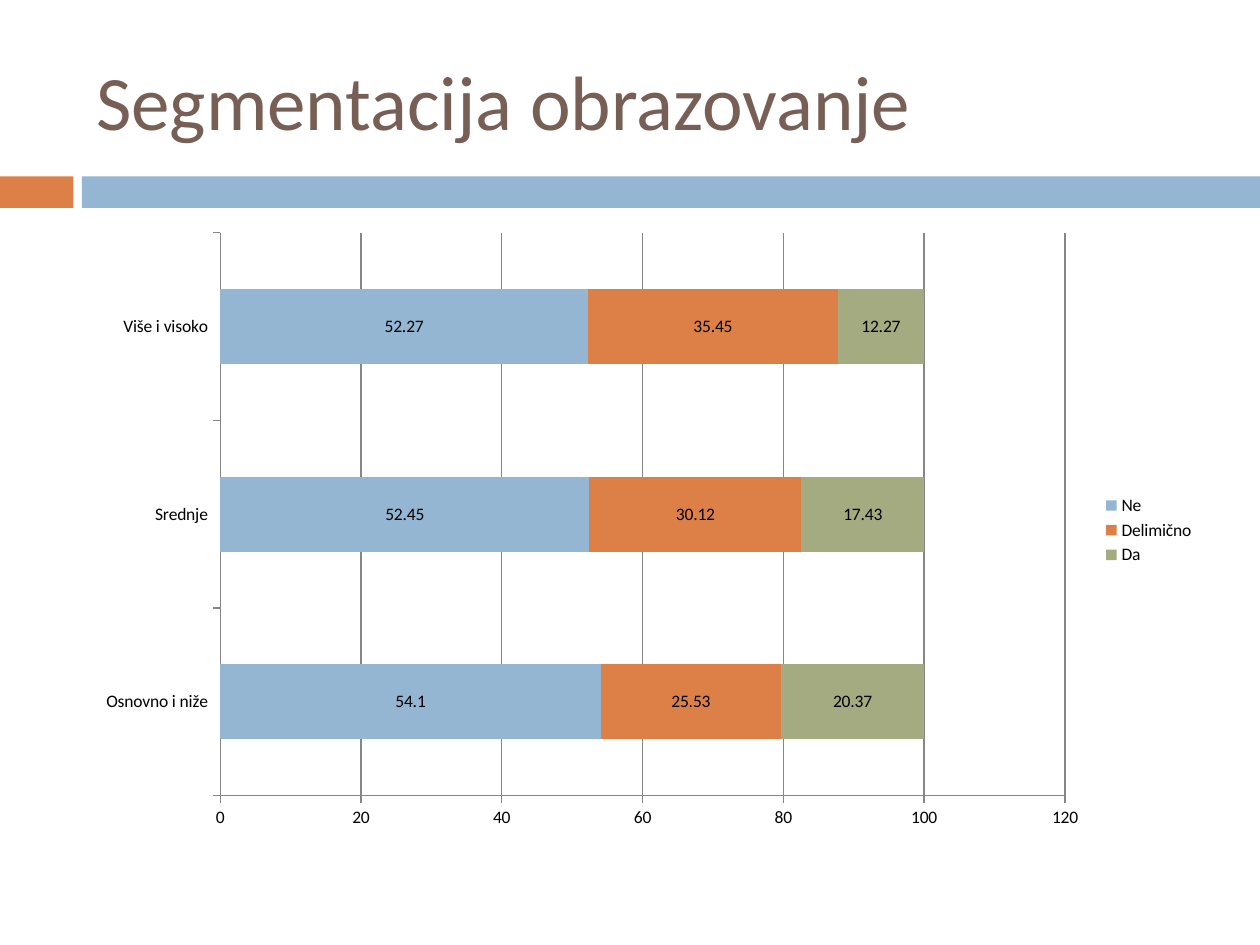
from pptx import Presentation, util as u
from pptx.chart.data import CategoryChartData
from pptx.dml.color import RGBColor
from pptx.enum import chart as charts, shapes, text

COLORS = {
    "title": "775F55",
    "text": "000000",
    "grid": "868686",
    "blue": "94B6D2",
    "orange": "DD8047",
    "green": "A5AB81",
}
CATEGORIES = ["Osnovno i niže", "Srednje", "Više i visoko"]
ANSWERS = [
    ("Ne", "blue", (54.1, 52.45, 52.27)),
    ("Delimično", "orange", (25.53, 30.12, 35.45)),
    ("Da", "green", (20.37, 17.43, 12.27)),
]


class SlideBuilder:
    font_name = "Calibri"
    columns, rows = 120, 90

    def __init__(self, presentation):
        self.cell_width = presentation.slide_width / self.columns
        self.cell_height = presentation.slide_height / self.rows
        self.slide = presentation.slides.add_slide(presentation.slide_layouts[6])

    def box(self, column, row, width, height):
        return (
            u.Emu(int(column * self.cell_width)),
            u.Emu(int(row * self.cell_height)),
            u.Emu(int(width * self.cell_width)),
            u.Emu(int(height * self.cell_height)),
        )

    def color(self, name):
        return RGBColor.from_string(COLORS[name])

    def style_font(self, font, size, color):
        font.name = self.font_name
        font.size = u.Pt(size)
        font.color.rgb = self.color(color)

    def band(self, color, *area):
        shape = self.slide.shapes.add_shape(
            shapes.MSO_SHAPE.RECTANGLE, *self.box(*area)
        )
        shape.shadow.inherit = False
        shape.fill.solid()
        shape.fill.fore_color.rgb = self.color(color)
        shape.line.fill.background()

    def title(self, words, *area):
        frame = self.slide.shapes.add_textbox(*self.box(*area)).text_frame
        frame.word_wrap = True
        frame.vertical_anchor = text.MSO_ANCHOR.MIDDLE
        paragraph = frame.paragraphs[0]
        paragraph.text = words
        self.style_font(paragraph.font, 44, "title")

    def stacked_bars(self, categories, answers, *area):
        data = CategoryChartData()
        data.categories = categories
        for name, _, values in answers:
            data.add_series(name, values)
        chart = self.slide.shapes.add_chart(
            charts.XL_CHART_TYPE.BAR_STACKED, *self.box(*area), data
        ).chart
        self.style_font(chart.font, 10, "text")
        chart.has_title = False
        chart.has_legend = True
        chart.legend.position = charts.XL_LEGEND_POSITION.RIGHT
        chart.legend.include_in_layout = False

        for axis in (chart.category_axis, chart.value_axis):
            axis.major_tick_mark = charts.XL_TICK_MARK.OUTSIDE
            axis.minor_tick_mark = charts.XL_TICK_MARK.NONE
            self.style_line(axis.format.line)
        axis = chart.value_axis
        axis.minimum_scale, axis.maximum_scale, axis.major_unit = 0, 120, 20
        axis.has_major_gridlines = True
        self.style_line(axis.major_gridlines.format.line)

        plot = chart.plots[0]
        plot.vary_by_categories = False
        plot.gap_width, plot.overlap = 150, 100
        plot.has_data_labels = True
        plot.data_labels.show_value = True
        for series, (_, color, _) in zip(plot.series, answers):
            series.format.fill.solid()
            series.format.fill.fore_color.rgb = self.color(color)

    def style_line(self, line):
        line.color.rgb = self.color("grid")
        line.width = u.Pt(0.75)


def main():
    presentation = Presentation()
    presentation.slide_width = u.Inches(10)
    presentation.slide_height = u.Inches(7.5)
    builder = SlideBuilder(presentation)
    builder.band("orange", 0, 16.8, 7, 3)
    builder.band("blue", 7.8, 16.8, 112.2, 3)
    builder.title("Segmentacija obrazovanje", 8, 3, 107, 13)
    builder.stacked_bars(CATEGORIES, ANSWERS, 8, 21, 107, 59)
    presentation.save("out.pptx")


if __name__ == "__main__":
    main()
